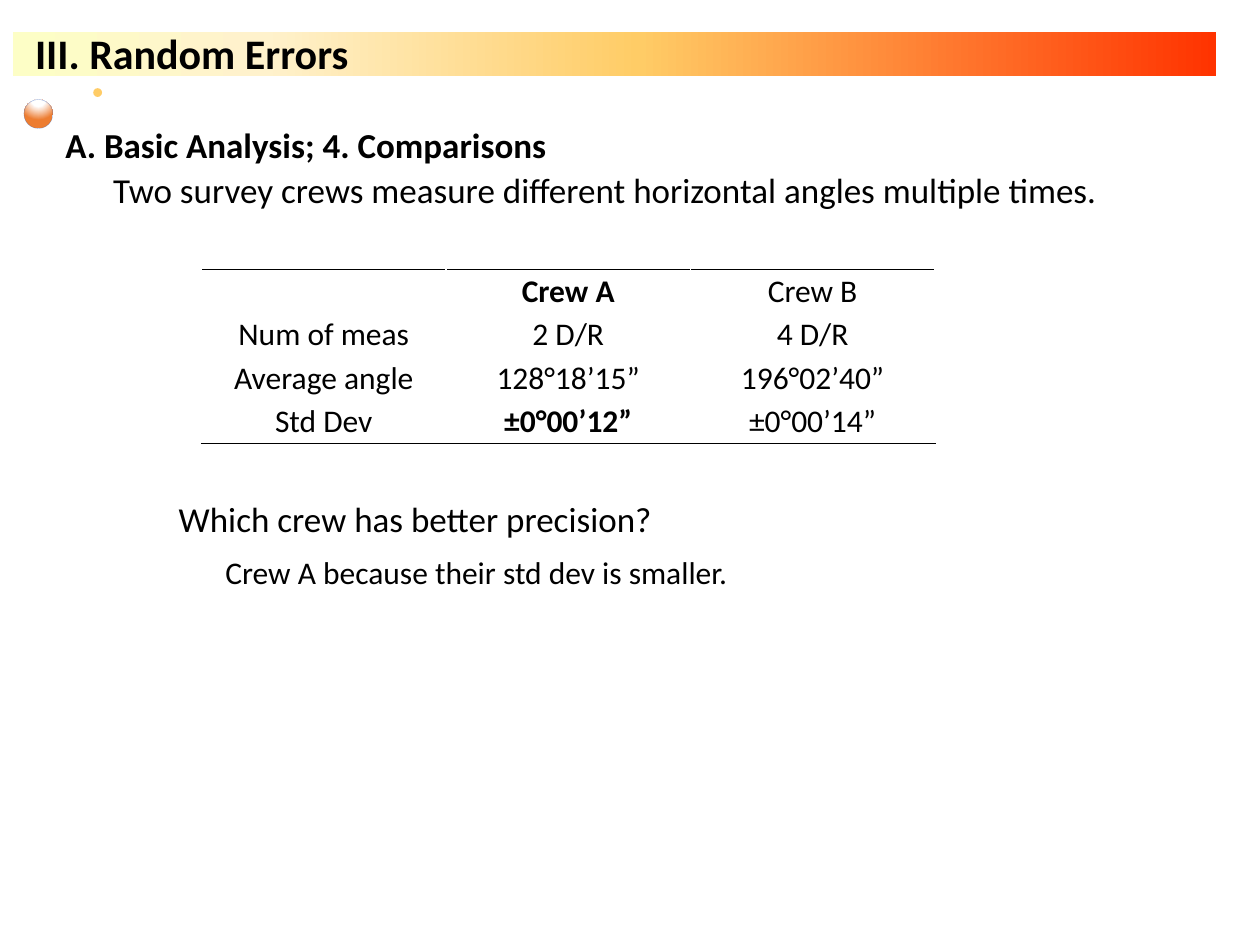
import pptx
import pptx.dml.color
import pptx.enum.dml
import pptx.enum.shapes
import pptx.enum.text
import pptx.oxml
import pptx.oxml.ns
import pptx.util

Inches = pptx.util.Inches
Pt = pptx.util.Pt
SHAPES = pptx.enum.shapes.MSO_SHAPE
ALIGN = pptx.enum.text.PP_ALIGN

THEME = {
    "font": "Calibri",
    "ink": "000000",
    "accent": "FFCC66",
    "ball_line": "3B6BC1",
    "bar_stops": [(0, "FF3300"), (48, "FFCC66"), (79, "FFF2CC"), (100, "FDFEC6")],
    "ball_stops": [(0, "FFFFFF"), (35, "FFFFFF"), (100, "ED7D31")],
    "title": 24,
    "body": 20,
    "detail": 18,
}

TITLE = "III. Random Errors"
HEADING = "A. Basic Analysis; 4. Comparisons"
STATEMENT = "Two survey crews measure different horizontal angles multiple times."
QUESTION = "Which crew has better precision?"
ANSWER = "Crew A because their std dev is smaller."
CREW_ROWS = [
    ("", "Crew A", "Crew B"),
    ("Num of meas", "2 D/R", "4 D/R"),
    ("Average angle", "128°18’15”", "196°02’40”"),
    ("Std Dev", "±0°00’12”", "±0°00’14”"),
]
BOLD_CELLS = {(0, 1), (3, 1)}
TABLE_LEFT, TABLE_TOP = 1.6, 2.14
COLUMN_WIDTH, ROW_HEIGHT = 1.94, 0.345


def color(name):
    return pptx.dml.color.RGBColor.from_string(THEME[name])


def xml(tag, content, attributes=""):
    namespace = pptx.oxml.ns.nsdecls("a")
    return pptx.oxml.parse_xml(f"<a:{tag} {namespace} {attributes}>{content}</a:{tag}>")


def write(paragraph, text, size="body", bold=False, align=None,
          indent=0, line_spacing=None, before=None):
    run = paragraph.add_run()
    run.text = text
    run.font.name = THEME["font"]
    run.font.size = Pt(THEME[size])
    run.font.bold = bold
    run.font.color.rgb = color("ink")
    paragraph.alignment = align
    paragraph.line_spacing = line_spacing
    if before is not None:
        paragraph.space_before = Pt(before)
    if indent:
        properties = paragraph._p.get_or_add_pPr()
        properties.set("marL", str(Inches(indent)))
        properties.set("indent", "0")


def add_text_box(slide, box, wrap=True):
    frame = slide.shapes.add_textbox(*map(Inches, box)).text_frame
    frame.word_wrap = wrap
    return frame


def add_plain_shape(slide, kind, box):
    shape = slide.shapes.add_shape(kind, *map(Inches, box))
    shape.shadow.inherit = False
    shape.line.fill.background()
    return shape


def set_gradient(shape, stops, direction):
    """Fill with any number of (percent, colour) stops; direction is XML."""
    shape.fill.background()
    old_fill = shape._element.spPr.find(pptx.oxml.ns.qn("a:noFill"))
    stop_xml = "".join(
        f'<a:gs pos="{percent * 1000}"><a:srgbClr val="{value}"/></a:gs>'
        for percent, value in stops)
    gradient = xml("gradFill", f"<a:gsLst>{stop_xml}</a:gsLst>{direction}",
                   'rotWithShape="1"')
    old_fill.getparent().replace(old_fill, gradient)


def add_header(slide):
    bar = add_plain_shape(slide, SHAPES.RECTANGLE, (0.1, 0.25, 9.55, 0.35))
    set_gradient(bar, THEME["bar_stops"], '<a:lin ang="10800000" scaled="0"/>')
    title = add_text_box(slide, (0.18, 0.17, 7.29, 0.5))
    write(title.paragraphs[0], TITLE, size="title", bold=True)

    ball = add_plain_shape(slide, SHAPES.OVAL, (0.19, 0.79, 0.23, 0.23))
    set_gradient(ball, THEME["ball_stops"],
                 '<a:path path="circle"><a:fillToRect l="50000" t="-80000" '
                 'r="50000" b="180000"/></a:path>')
    ball.line.color.rgb = color("ball_line")
    ball.line.width = Pt(0.16)
    line_color = ball.line._ln.find(".//" + pptx.oxml.ns.qn("a:srgbClr"))
    line_color.append(xml("alpha", "", 'val="60000"'))

    dot = add_plain_shape(slide, SHAPES.OVAL, (0.74, 0.7, 0.07, 0.07))
    dot.fill.solid()
    dot.fill.fore_color.rgb = color("accent")


def add_rule(cell, side):
    """Draw a one-point border; side is lnT or lnB."""
    border = xml(side, f'<a:solidFill><a:srgbClr val="{THEME["ink"]}"/></a:solidFill>',
                 f'w="{Pt(1)}"')
    cell._tc.get_or_add_tcPr().insert(0, border)


def add_crew_table(slide):
    row_count, column_count = len(CREW_ROWS), len(CREW_ROWS[0])
    table = slide.shapes.add_table(
        row_count, column_count, Inches(TABLE_LEFT), Inches(TABLE_TOP),
        Inches(COLUMN_WIDTH * column_count), Inches(ROW_HEIGHT * row_count)).table
    table.first_row = table.horz_banding = False
    for row, values in enumerate(CREW_ROWS):
        for column, value in enumerate(values):
            cell = table.cell(row, column)
            cell.fill.background()
            cell.margin_left = cell.margin_right = Inches(0.02)
            cell.margin_top = cell.margin_bottom = Inches(0.02)
            if value:
                write(cell.text_frame.paragraphs[0], value, size="detail",
                      bold=(row, column) in BOLD_CELLS, align=ALIGN.CENTER)
            if row == 0:
                add_rule(cell, "lnT")
            if row == row_count - 1:
                add_rule(cell, "lnB")


def main():
    presentation = pptx.Presentation()
    presentation.slide_width, presentation.slide_height = Inches(10), Inches(7.5)
    slide = presentation.slides.add_slide(presentation.slide_layouts[6])

    add_header(slide)
    body = add_text_box(slide, (0.42, 0.97, 8.62, 5.86))
    write(body.paragraphs[0], HEADING, bold=True, line_spacing=0.9, before=7.5)
    write(body.add_paragraph(), STATEMENT, indent=0.38, line_spacing=0.9, before=3.8)
    add_crew_table(slide)
    question = add_text_box(slide, (1.32, 3.9, 4, 0.77), wrap=False)
    write(question.paragraphs[0], QUESTION)
    answer = add_text_box(slide, (1.69, 4.34, 5.72, 0.4))
    write(answer.paragraphs[0], ANSWER, size="detail")

    presentation.save("out.pptx")


if __name__ == "__main__":
    main()
